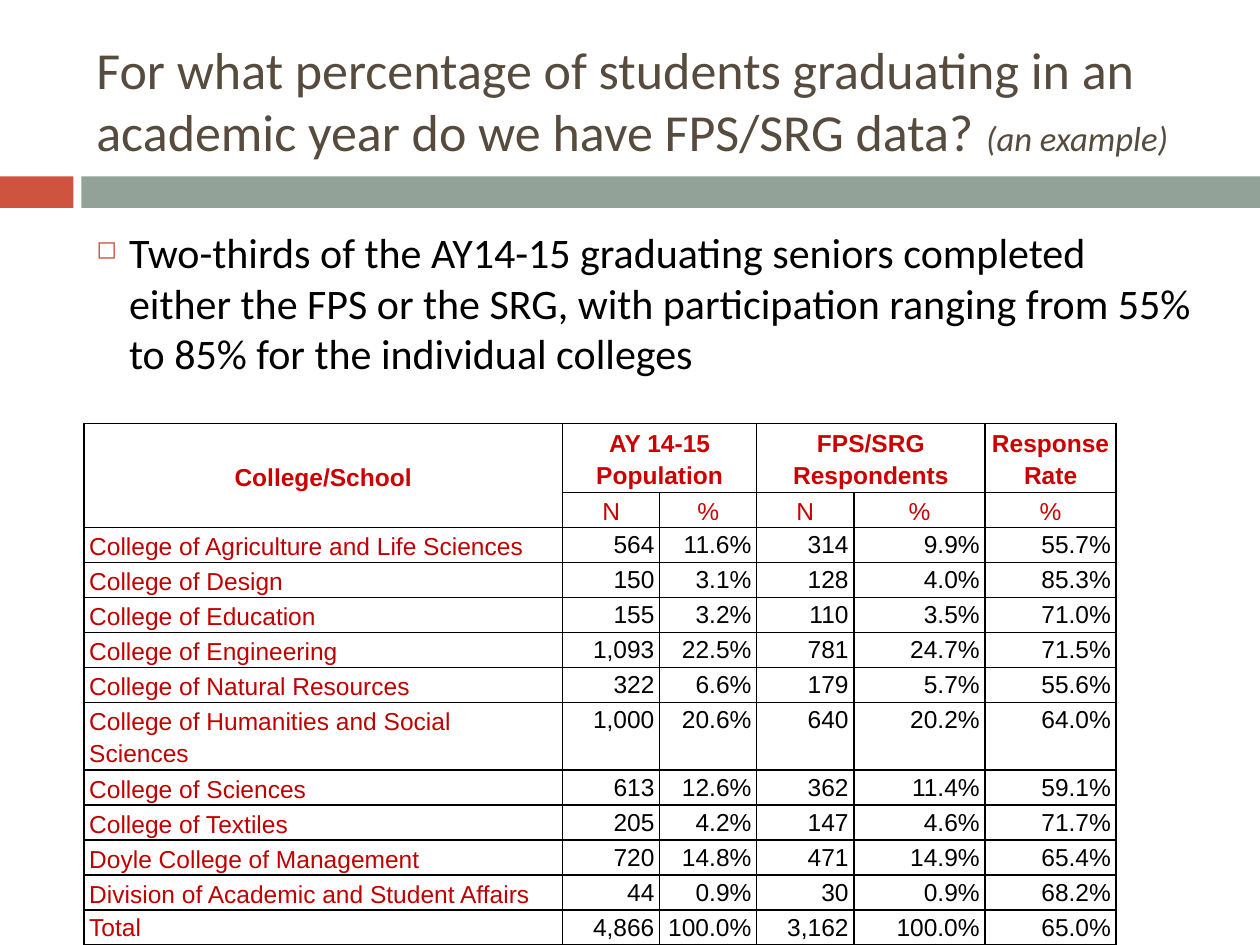
from lxml import etree
from pptx import Presentation
from pptx.dml.color import RGBColor
from pptx.enum.shapes import MSO_SHAPE
from pptx.enum.text import MSO_ANCHOR, PP_ALIGN
from pptx.oxml.ns import qn
from pptx.util import Pt

RECT = MSO_SHAPE.RECTANGLE
MIDDLE, TOP = MSO_ANCHOR.MIDDLE, MSO_ANCHOR.TOP
LEFT, CENTER, RIGHT = PP_ALIGN.LEFT, PP_ALIGN.CENTER, PP_ALIGN.RIGHT

WHITE = RGBColor(0xFF, 0xFF, 0xFF)
BLACK = RGBColor(0x00, 0x00, 0x00)
RUST = RGBColor(0xCF, 0x54, 0x3F)
SAGE = RGBColor(0x93, 0xA2, 0x99)
BROWN = RGBColor(0x56, 0x4B, 0x3C)
RED = RGBColor(0xCC, 0x00, 0x00)
CRIMSON = RGBColor(0xC0, 0x00, 0x00)

HEAD = [
    ["College/School", "AY 14-15 Population", "", "FPS/SRG Respondents", "",
     "Response Rate"],
    ["", "N", "%", "N", "%", "%"],
]
BODY = [
    ["College of Agriculture and Life Sciences", "564", "11.6%", "314", "9.9%", "55.7%"],
    ["College of Design", "150", "3.1%", "128", "4.0%", "85.3%"],
    ["College of Education", "155", "3.2%", "110", "3.5%", "71.0%"],
    ["College of Engineering", "1,093", "22.5%", "781", "24.7%", "71.5%"],
    ["College of Natural Resources", "322", "6.6%", "179", "5.7%", "55.6%"],
    ["College of Humanities and Social Sciences", "1,000", "20.6%", "640", "20.2%", "64.0%"],
    ["College of Sciences", "613", "12.6%", "362", "11.4%", "59.1%"],
    ["College of Textiles", "205", "4.2%", "147", "4.6%", "71.7%"],
    ["Doyle College of Management", "720", "14.8%", "471", "14.9%", "65.4%"],
    ["Division of Academic and Student Affairs", "44", "0.9%", "30", "0.9%", "68.2%"],
    ["Total", "4,866", "100.0%", "3,162", "100.0%", "65.0%"],
]
ROWS = HEAD + BODY
WIDTHS = [273.5, 55.5, 55.5, 55.5, 75, 75]
HEIGHTS = [39.5] + [20] * (len(ROWS) - 1)


def add_run(para, text, color, **font):
    run = para.add_run()
    run.text = text
    run.font.color.rgb = color
    for name, value in font.items():
        setattr(run.font, name, value)


def add_box(top, height, anchor):
    """Add a wrapping text box in the main column and return its frame."""
    box = slide.shapes.add_textbox(Pt(48), Pt(top), Pt(642), Pt(height))
    frame = box.text_frame
    frame.word_wrap = True
    frame.vertical_anchor = anchor
    return frame


deck = Presentation()
deck.slide_width, deck.slide_height = Pt(720), Pt(540)
slide = deck.slides.add_slide(deck.slide_layouts[6])

# Bars under the title
for left, width, color in [(0, 42, RUST), (46.5, 673.5, SAGE)]:
    bar = slide.shapes.add_shape(RECT, Pt(left), Pt(100.8), Pt(width), Pt(18))
    bar.shadow.inherit = False
    bar.fill.solid()
    bar.fill.fore_color.rgb = color
    bar.line.fill.background()

# Title
title = add_box(18, 78, MIDDLE).paragraphs[0]
add_run(title, "For what percentage of students graduating in an academic year "
        "do we have FPS/SRG data? ", BROWN, name="Calibri", size=Pt(29.7))
add_run(title, "(an example)", BROWN, name="Calibri", size=Pt(19.8), italic=True)

# Bullet
point = add_box(126, 414, TOP).paragraphs[0]
point.space_before = Pt(5.2)
add_run(point, "Two-thirds of the AY14-15 graduating seniors completed either the "
        "FPS or the SRG, with participation ranging from 55% to 85% for the "
        "individual colleges", BLACK, name="Calibri", size=Pt(24))
props = point._p.get_or_add_pPr()
props.set("marL", str(Pt(18.72)))
props.set("indent", str(Pt(-18.72)))
tint = etree.SubElement(props, qn("a:buClr"))
etree.SubElement(tint, qn("a:srgbClr"), val=str(RUST))
etree.SubElement(props, qn("a:buSzPct"), val="60000")
etree.SubElement(props, qn("a:buChar"), char="◻")

# Response table
frame = slide.shapes.add_table(len(ROWS), len(WIDTHS), Pt(48), Pt(242),
                               Pt(sum(WIDTHS)), Pt(sum(HEIGHTS)))
table = frame.table
table.first_row = table.horz_banding = False
for col, width in zip(table.columns, WIDTHS):
    col.width = Pt(width)
for row, height in zip(table.rows, HEIGHTS):
    row.height = Pt(height)

last = len(ROWS) - 1
for r, texts in enumerate(ROWS):
    for c, text in enumerate(texts):
        if r < len(HEAD):
            align, anchor, color = CENTER, MIDDLE, RED
        elif c == 0:
            align, anchor, color = LEFT, TOP if r == last else MIDDLE, CRIMSON
        else:
            align, anchor, color = RIGHT, TOP, BLACK

        cell = table.cell(r, c)
        look = {"margin_left": Pt(3), "margin_right": Pt(3), "margin_top": 0,
                "margin_bottom": 0, "vertical_anchor": anchor}
        for name, value in look.items():
            setattr(cell, name, value)
        edges = cell._tc.get_or_add_tcPr()
        for side in ("a:lnL", "a:lnR", "a:lnT", "a:lnB"):
            line = etree.SubElement(edges, qn(side), w=str(Pt(1)))
            paint = etree.SubElement(line, qn("a:solidFill"))
            etree.SubElement(paint, qn("a:srgbClr"), val=str(BLACK))
        cell.fill.solid()
        cell.fill.fore_color.rgb = WHITE

        para = cell.text_frame.paragraphs[0]
        look = {"alignment": align, "line_spacing": 1.15,
                "space_before": Pt(3), "space_after": Pt(3)}
        for name, value in look.items():
            setattr(para, name, value)
        if text:
            add_run(para, text, color, name="Arial", size=Pt(14), bold=r == 0)

for start, end in [((0, 0), (1, 0)), ((0, 1), (0, 2)), ((0, 3), (0, 4))]:
    table.cell(*start).merge(table.cell(*end))

deck.save("out.pptx")
